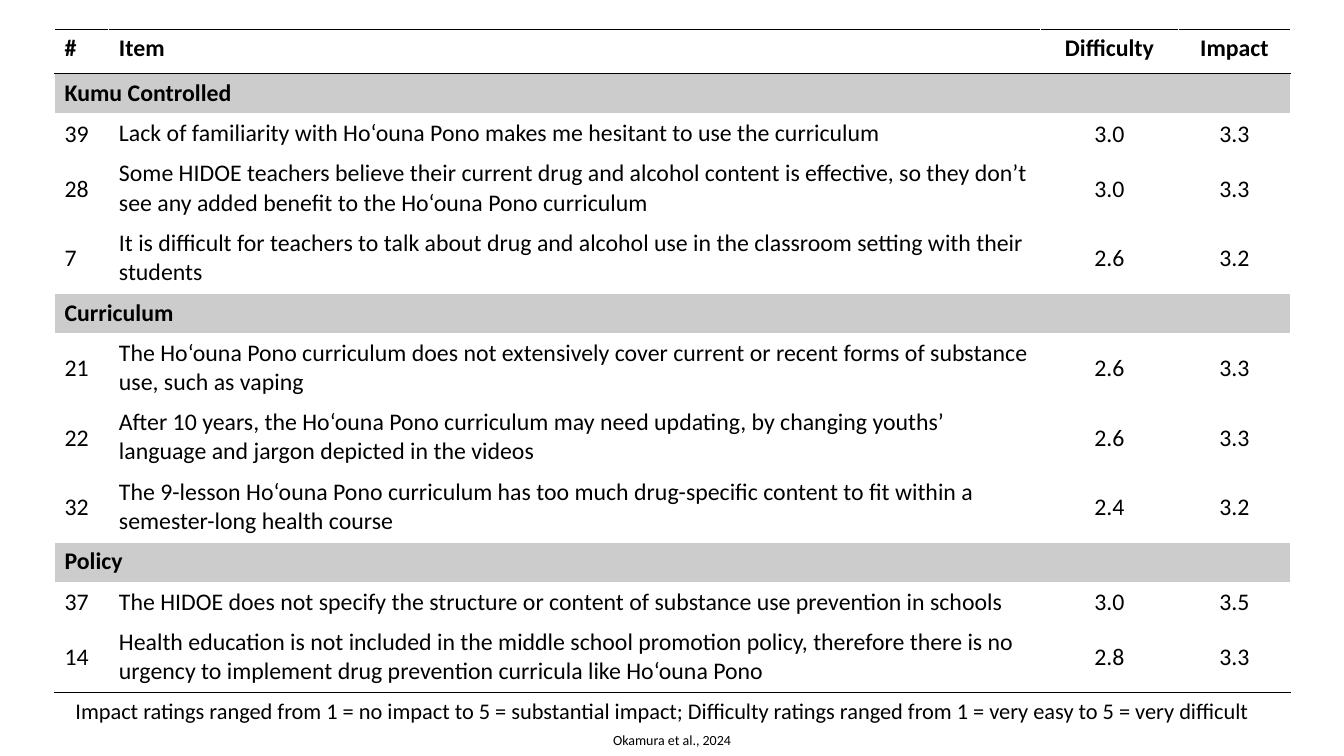
from lxml.etree import SubElement as Sub
from pptx import Presentation
from pptx.dml.color import RGBColor as RGB
from pptx.enum.text import MSO_ANCHOR as Anchor, PP_ALIGN as Align
from pptx.oxml.ns import qn
from pptx.util import Inches, Pt

WIDE, HIGH = 13.33, 7.5
HUES = {"ink": "000000", "paper": "FFFFFF", "band": "CCCCCC"}
COLS = [0.54, 9.24, 1.37, 1.11]
HEAD, LINE, PAIR = 0.44, 0.4, 0.69
FIT = 95  # characters that fit on one line of the Item column

TITLES = ["#", "Item", "Difficulty", "Impact"]
GROUPS = {
    "Kumu Controlled": [
        ("39", "Lack of familiarity with Ho‘ouna Pono makes me hesitant to use "
         "the curriculum", "3.0", "3.3"),
        ("28", "Some HIDOE teachers believe their current drug and alcohol content "
         "is effective, so they don’t see any added benefit to the Ho‘ouna Pono "
         "curriculum", "3.0", "3.3"),
        ("7", "It is difficult for teachers to talk about drug and alcohol use in "
         "the classroom setting with their students", "2.6", "3.2"),
    ],
    "Curriculum": [
        ("21", "The Ho‘ouna Pono curriculum does not extensively cover current or "
         "recent forms of substance use, such as vaping", "2.6", "3.3"),
        ("22", "After 10 years, the Ho‘ouna Pono curriculum may need updating, by "
         "changing youths’ language and jargon depicted in the videos",
         "2.6", "3.3"),
        ("32", "The 9-lesson Ho‘ouna Pono curriculum has too much drug-specific "
         "content to fit within a semester-long health course", "2.4", "3.2"),
    ],
    "Policy": [
        ("37", "The HIDOE does not specify the structure or content of substance "
         "use prevention in schools", "3.0", "3.5"),
        ("14", "Health education is not included in the middle school promotion "
         "policy, therefore there is no urgency to implement drug prevention "
         "curricula like Ho‘ouna Pono", "2.8", "3.3"),
    ],
}
SCALE = ("Impact ratings ranged from 1 = no impact to 5 = substantial impact; "
         "Difficulty ratings ranged from 1 = very easy to 5 = very difficult")
CREDIT = "Okamura et al., 2024"


def write(frame, text, size=17, bold=False, align=Align.LEFT):
    frame.word_wrap = True
    para = frame.paragraphs[0]
    para.alignment = align
    run = para.add_run()
    run.text = text
    run.font.name = "Calibri"
    run.font.size = Pt(size)
    run.font.bold = bold
    run.font.color.rgb = RGB.from_string(HUES["ink"])


def edge(cell, top, foot):
    """Draw the four borders; only top and foot may be inked."""
    props = cell._tc.get_or_add_tcPr()
    sides = {"L": "paper", "R": "paper", "T": top, "B": foot}
    for side, hue in sides.items():
        line = Sub(props, qn(f"a:ln{side}"), w=str(Pt(1)))
        fill = Sub(line, qn("a:solidFill"))
        Sub(fill, qn("a:srgbClr"), val=HUES[hue])


def paint(cell, hue):
    cell.fill.solid()
    cell.fill.fore_color.rgb = RGB.from_string(HUES[hue])


def ratings(slide, left, top):
    rows = [TITLES]
    for name, items in GROUPS.items():
        rows += [(name,), *items]
    tall = [HEAD] + [PAIR if len(row) > 1 and len(row[1]) > FIT else LINE
                     for row in rows[1:]]
    box = map(Inches, (left, top, sum(COLS), sum(tall)))
    table = slide.shapes.add_table(len(rows), len(COLS), *box).table
    for col, width in zip(table.columns, COLS):
        col.width = Inches(width)

    last = len(rows) - 1
    for r, row in enumerate(rows):
        table.rows[r].height = Inches(tall[r])
        band = len(row) == 1
        if band:
            table.cell(r, 0).merge(table.cell(r, len(COLS) - 1))
        for c in range(len(COLS)):
            cell = table.cell(r, c)
            edge(cell, "ink" if r < 2 else "paper",
                 "ink" if r in (0, last) else "paper")
            paint(cell, "band" if band else "paper")
            if c < len(row):
                write(cell.text_frame, row[c], bold=band or r == 0,
                      align=Align.CENTER if c > 1 else Align.LEFT)
            if r and not band and c != 1:
                cell.vertical_anchor = Anchor.MIDDLE


def note(slide, text, left, top, width, height, **style):
    box = slide.shapes.add_textbox(*map(Inches, (left, top, width, height)))
    write(box.text_frame, text, **style)


def main():
    deck = Presentation()
    deck.slide_width, deck.slide_height = Inches(WIDE), Inches(HIGH)
    slide = deck.slides.add_slide(deck.slide_layouts[6])
    ratings(slide, 0.54, 0.29)
    note(slide, SCALE, 0.65, 6.87, 12.04, 0.37, size=16)
    note(slide, CREDIT, 0.86, 7.21, 11.61, 0.27, size=10, align=Align.CENTER)
    deck.save("out.pptx")


if __name__ == "__main__":
    main()
